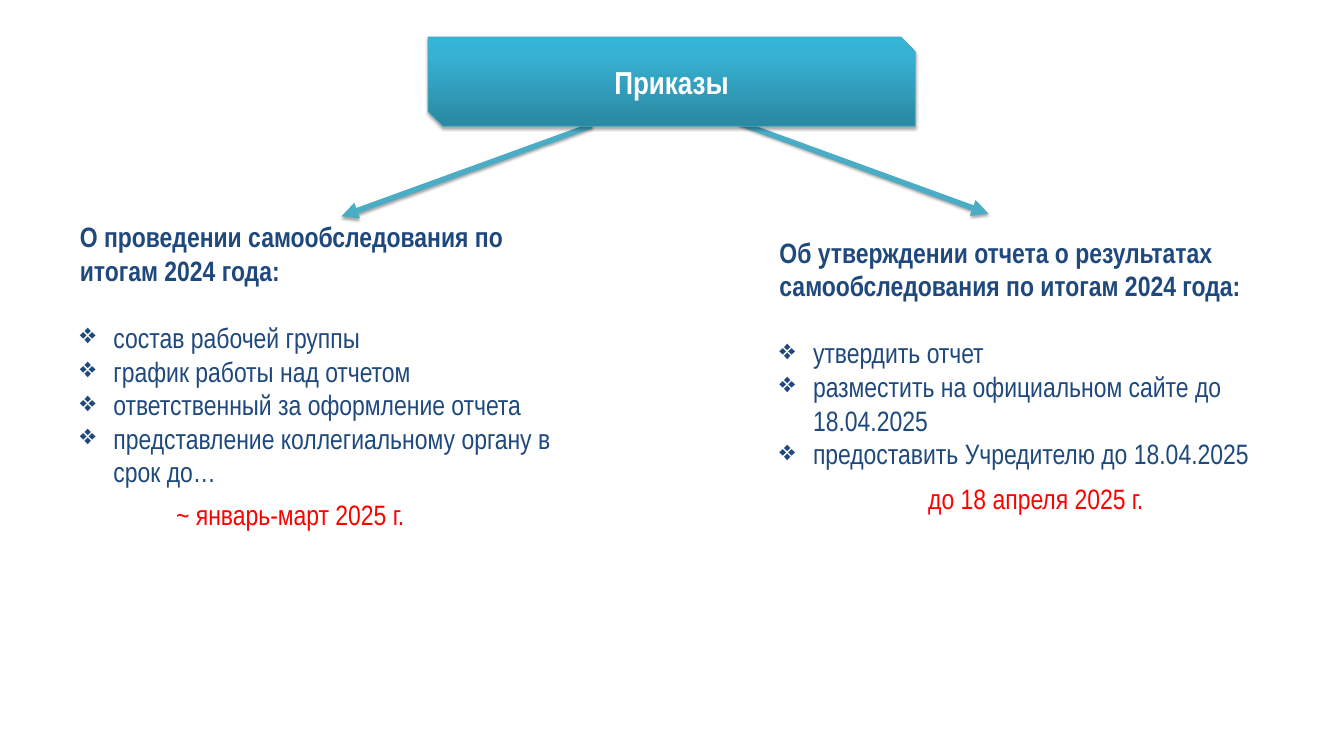
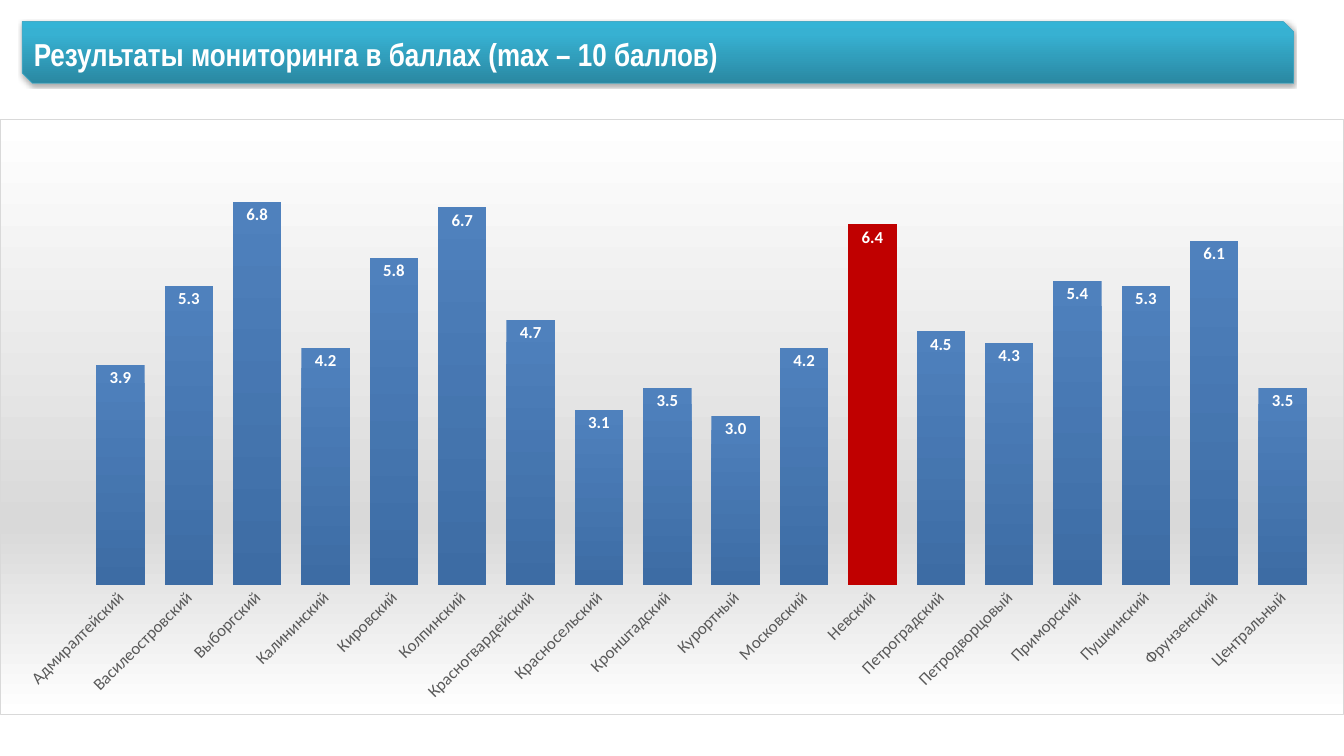
from dataclasses import dataclass

from lxml import etree
from pptx import Presentation
from pptx.chart.data import CategoryChartData
from pptx.dml.color import RGBColor
from pptx.enum import chart as ch, shapes, text
from pptx.oxml import parse_xml
from pptx.oxml.ns import nsdecls, qn
from pptx.util import Inches, Pt

WHITE = RGBColor(0xFF, 0xFF, 0xFF)
NAVY = RGBColor(0x1F, 0x49, 0x7D)
RED = RGBColor(0xFF, 0x00, 0x00)
DARK_RED = RGBColor(0xC0, 0x00, 0x00)
TEAL = RGBColor(0x4B, 0xAC, 0xC6)
BANNER_EDGE = RGBColor(0x46, 0xAA, 0xC5)
LABEL_GREY = RGBColor(0x59, 0x59, 0x59)
BORDER_GREY = RGBColor(0xD9, 0xD9, 0xD9)
BANNER_STOPS = [(0, RGBColor(0x2A, 0x88, 0xA2)), (80, RGBColor(0x37, 0xB1, 0xD2)),
                (100, RGBColor(0x34, 0xB4, 0xD6))]
BAR_STOPS = [(0, RGBColor(0x4F, 0x81, 0xBD)), (100, RGBColor(0x3D, 0x6C, 0xA4))]
CHART_STOPS = [(0, WHITE), (68, BORDER_GREY), (100, WHITE)]

TEXT_FONT = "Arial Narrow"
CHART_FONT = "Calibri"
BODY_SIZE = Pt(30)
TITLE_SIZE = Pt(34)
LABEL_SIZE = Pt(18)
LIST_GAP = Pt(36)


@dataclass
class Box:
    left: float
    top: float
    width: float
    height: float

    def lengths(self) -> list:
        return [Inches(v) for v in (self.left, self.top, self.width, self.height)]


@dataclass
class Order:
    """One branch of the scheme: its arrow, heading, points and deadline."""
    arrow: tuple
    box: Box
    heading: str
    points: list
    deadline_box: Box
    deadline: str


ORDERS = [
    Order((11, 1.83, 14.71, 3.18), Box(11.5, 3.45, 7.48, 4.54),
          "Об утверждении отчета о результатах самообследования по итогам 2024 года:",
          ["утвердить отчет",
           "разместить на официальном сайте до 18.04.2025",
           "предоставить Учредителю до 18.04.2025"],
          Box(13.25, 7.12, 4.33, 0.61), "до 18 апреля 2025 г."),
    Order((8.8, 1.87, 5.08, 3.22), Box(1.09, 3.22, 7.48, 4.14),
          "О проведении самообследования по итогам 2024 года:",
          ["состав рабочей группы",
           "график работы над отчетом",
           "ответственный за оформление отчета",
           "представление коллегиальному органу в срок до…"],
          Box(2.42, 7.36, 3.8, 0.61), "~ январь-март 2025 г."),
]

SCORES = {
    "Адмиралтейский": 3.9, "Василеостровский": 5.3, "Выборгский": 6.8,
    "Калининский": 4.2, "Кировский": 5.8, "Колпинский": 6.7,
    "Красногвардейский": 4.7, "Красносельский": 3.1, "Кронштадский": 3.5,
    "Курортный": 3.0, "Московский": 4.2, "Невский": 6.4,
    "Петроградский": 4.5, "Петродворцовый": 4.3, "Приморский": 5.4,
    "Пушкинский": 5.3, "Фрунзенский": 6.1, "Центральный": 3.5,
}
HIGHLIGHTED = "Невский"


def gradient_xml(stops: list, angle: int) -> str:
    marks = "".join(f'<a:gs pos="{pos * 1000}"><a:srgbClr val="{color}"/></a:gs>'
                    for pos, color in stops)
    return (f'<a:gradFill rotWithShape="1" {nsdecls("a")}><a:gsLst>{marks}</a:gsLst>'
            f'<a:lin ang="{angle * 60000}" scaled="0"/></a:gradFill>')


def fill_gradient(fill, properties, stops: list, angle: int) -> None:
    fill.background()
    empty = properties.find(qn("a:noFill"))
    properties.replace(empty, parse_xml(gradient_xml(stops, angle)))


def add_soft_shadow(properties) -> None:
    """Append the shared shadow; call after fill and line are set."""
    properties.append(parse_xml(
        f'<a:effectLst {nsdecls("a")}><a:outerShdw blurRad="{Pt(3.1)}" dist="{Pt(1.8)}" '
        'dir="5400000" rotWithShape="0"><a:srgbClr val="000000"><a:alpha val="35000"/>'
        '</a:srgbClr></a:outerShdw></a:effectLst>'))


def add_run(p, words: str, size, color: RGBColor, bold: bool = False) -> None:
    r = p.add_run()
    r.text = words
    r.font.name = TEXT_FONT
    r.font.size = size
    r.font.bold = bold
    r.font.color.rgb = color


def add_banner(s, box: Box, title: str, align, line_spacing: float = 1.0) -> None:
    sp = s.shapes.add_shape(shapes.MSO_SHAPE.SNIP_2_DIAG_RECTANGLE, *box.lengths())
    properties = sp._element.spPr
    fill_gradient(sp.fill, properties, BANNER_STOPS, 270)
    sp.line.color.rgb = BANNER_EDGE
    sp.line.width = Pt(0.75)
    add_soft_shadow(properties)
    tf = sp.text_frame
    tf.word_wrap = True
    tf.vertical_anchor = text.MSO_ANCHOR.MIDDLE
    p = tf.paragraphs[0]
    p.alignment = align
    p.line_spacing = line_spacing
    add_run(p, title, TITLE_SIZE, WHITE, bold=True)


def add_arrow(s, ends: tuple) -> None:
    cx = s.shapes.add_connector(shapes.MSO_CONNECTOR.STRAIGHT, *map(Inches, ends))
    cx.line.color.rgb = TEAL
    cx.line.width = Pt(6)
    etree.SubElement(cx.line._get_or_add_ln(), qn("a:tailEnd"), type="triangle")
    add_soft_shadow(cx._element.spPr)


def add_text_frame(s, box: Box):
    tf = s.shapes.add_textbox(*box.lengths()).text_frame
    tf.word_wrap = True
    tf.auto_size = text.MSO_AUTO_SIZE.SHAPE_TO_FIT_TEXT
    return tf


def set_bullet(p) -> None:
    ppr = p._p.get_or_add_pPr()
    ppr.set("marL", str(Inches(0.5)))
    ppr.set("indent", str(-Inches(0.5)))
    etree.SubElement(ppr, qn("a:buChar"), char="❖")


def add_order(s, order: Order) -> None:
    add_arrow(s, order.arrow)
    tf = add_text_frame(s, order.box)
    heading = tf.paragraphs[0]
    heading.space_after = LIST_GAP
    add_run(heading, order.heading, BODY_SIZE, NAVY, bold=True)
    for point in order.points:
        p = tf.add_paragraph()
        set_bullet(p)
        add_run(p, point, BODY_SIZE, NAVY)
    p = add_text_frame(s, order.deadline_box).paragraphs[0]
    p.alignment = text.PP_ALIGN.CENTER
    add_run(p, order.deadline, BODY_SIZE, RED)


def style_chart_area(chart) -> None:
    """Give the chart its background and border, and fix the plot position."""
    chart._chartSpace.find(qn("c:chart")).addnext(parse_xml(
        f'<c:spPr {nsdecls("c", "a")}>{gradient_xml(CHART_STOPS, 90)}'
        f'<a:ln w="{Pt(0.75)}"><a:solidFill><a:srgbClr val="{BORDER_GREY}"/></a:solidFill>'
        '</a:ln></c:spPr>'))
    plot_area = chart._chartSpace.chart.plotArea
    for old in plot_area.findall(qn("c:layout")):
        plot_area.remove(old)
    parts = "".join(f'<c:{key} val="{val}"/>' for key, val in (
        ("layoutTarget", "inner"), ("xMode", "edge"), ("yMode", "edge"),
        ("x", 0.064), ("y", 0.025), ("w", 0.916), ("h", 0.758)))
    plot_area.insert(0, parse_xml(
        f'<c:layout {nsdecls("c")}><c:manualLayout>{parts}</c:manualLayout></c:layout>'))


def style_axes(chart) -> None:
    districts = chart.category_axis
    districts.major_tick_mark = ch.XL_TICK_MARK.NONE
    districts.format.line.fill.background()
    font = districts.tick_labels.font
    font.size, font.name = LABEL_SIZE, CHART_FONT
    font.color.rgb = LABEL_GREY
    districts._element.find(qn("c:txPr")).find(qn("a:bodyPr")).set("rot", str(-45 * 60000))
    points = chart.value_axis
    points.minimum_scale, points.maximum_scale = 0, 8
    points.has_major_gridlines = False
    points.visible = False


def add_score_chart(s, box: Box) -> None:
    data = CategoryChartData(number_format="0.0")
    data.categories = list(SCORES)
    data.add_series("Баллы", list(SCORES.values()))
    chart = s.shapes.add_chart(ch.XL_CHART_TYPE.COLUMN_CLUSTERED, *box.lengths(), data).chart
    chart.has_legend = False
    chart.has_title = False
    chart.font.name = CHART_FONT
    chart.font.size = Pt(10)
    style_chart_area(chart)
    style_axes(chart)

    plot = chart.plots[0]
    plot.gap_width = 41
    plot.vary_by_categories = False
    bars = plot.series[0]
    bars.invert_if_negative = False
    fill_gradient(bars.format.fill, bars._element.spPr, BAR_STOPS, 90)
    highlight = bars.points[list(SCORES).index(HIGHLIGHTED)].format.fill
    highlight.solid()
    highlight.fore_color.rgb = DARK_RED

    labels = bars.data_labels
    labels.show_value = True
    labels.position = ch.XL_LABEL_POSITION.INSIDE_END
    labels.number_format = "0.0"
    labels.number_format_is_linked = False
    labels.font.size, labels.font.name, labels.font.bold = LABEL_SIZE, CHART_FONT, True
    labels.font.color.rgb = WHITE


def main() -> None:
    prs = Presentation()
    prs.slide_width, prs.slide_height = Inches(20), Inches(11.25)
    blank = prs.slide_layouts[6]

    s = prs.slides.add_slide(blank)
    for order in ORDERS:
        add_order(s, order)
    add_banner(s, Box(6.37, 0.55, 7.25, 1.33), "Приказы", text.PP_ALIGN.CENTER)

    s = prs.slides.add_slide(blank)
    add_score_chart(s, Box(0, 1.77, 20, 8.86))
    add_banner(s, Box(0.33, 0.32, 18.92, 0.92),
               "Результаты мониторинга в баллах (max – 10 баллов)",
               text.PP_ALIGN.LEFT, line_spacing=1.08)

    prs.save("out.pptx")


if __name__ == "__main__":
    main()
